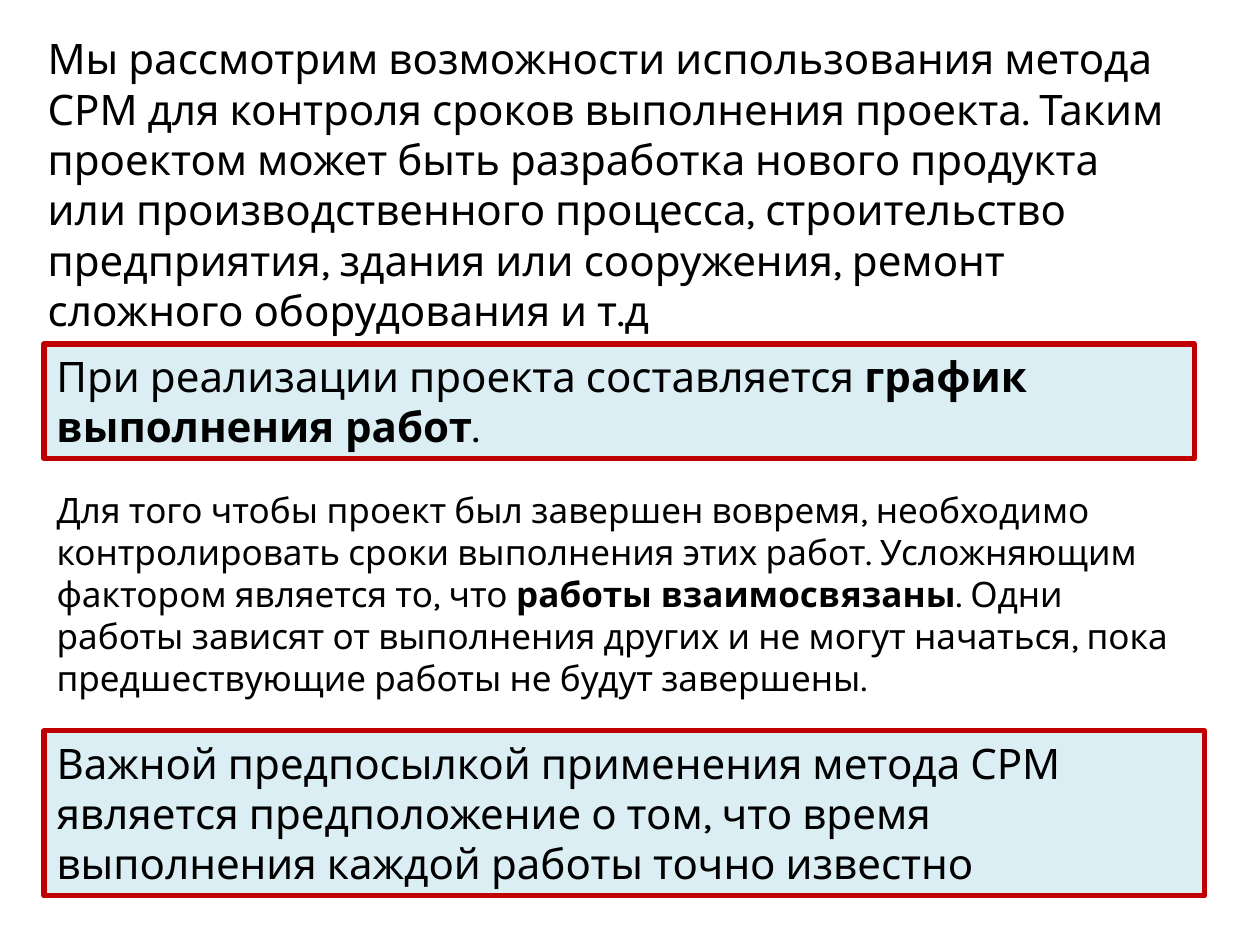
"""Builds a slide introducing the critical path method for project schedules."""
from pptx import Presentation
from pptx.dml.color import RGBColor
from pptx.enum.shapes import MSO_SHAPE
from pptx.enum.text import MSO_ANCHOR, MSO_AUTO_SIZE, PP_ALIGN
from pptx.util import Inches, Pt

THEME = {
    "font": "Karla",
    "text": RGBColor(0, 0, 0),
    "fill": RGBColor(0xDB, 0xEE, 0xF4),
    "border": RGBColor(0xC0, 0, 0),
    "border_width": Pt(3),
    "large": Pt(24),
    "body": Pt(20),
}

BLOCKS = [
    {"at": (0.28, 0.21, 9.21, 2.52), "size": "large", "framed": False, "runs": [
        ("Мы рассмотрим возможности использования метода СРМ для контроля сроков "
         "выполнения проекта. Таким проектом может быть разработка нового продукта "
         "или производственного процесса, строительство предприятия, здания или "
         "сооружения, ремонт сложного оборудования и т.д", False)]},
    {"at": (0.35, 2.73, 9.13, 0.91), "size": "large", "framed": True, "runs": [
        ("При реализации проекта составляется ", False),
        ("график выполнения работ", True),
        (".", False)]},
    {"at": (0.35, 3.83, 9.21, 1.78), "size": "body", "framed": False, "runs": [
        ("Для того чтобы проект был завершен вовремя, необходимо контролировать "
         "сроки выполнения этих работ. Усложняющим фактором является то, что ", False),
        ("работы взаимосвязаны", True),
        (". Одни работы зависят от выполнения других и не могут начаться, пока "
         "предшествующие работы не будут завершены.", False)]},
    {"at": (0.35, 5.8, 9.21, 1.31), "size": "large", "framed": True, "runs": [
        ("Важной предпосылкой применения метода СРМ является предположение о том, "
         "что время выполнения каждой работы точно известно", False)]},
]


def set_attrs(obj, values):
    for name, value in values.items():
        setattr(obj, name, value)


def add_block(slide, block):
    box = [Inches(v) for v in block["at"]]
    if block["framed"]:
        sp = slide.shapes.add_shape(MSO_SHAPE.RECTANGLE, *box)
        sp.shadow.inherit = False
        sp.fill.solid()
        sp.fill.fore_color.rgb = THEME["fill"]
        sp.line.color.rgb = THEME["border"]
        sp.line.width = THEME["border_width"]
    else:
        sp = slide.shapes.add_textbox(*box)
    tf = sp.text_frame
    set_attrs(tf, {"word_wrap": True, "vertical_anchor": MSO_ANCHOR.TOP,
                   "auto_size": MSO_AUTO_SIZE.SHAPE_TO_FIT_TEXT})
    p = tf.paragraphs[0]
    p.alignment = PP_ALIGN.LEFT
    for text, bold in block["runs"]:
        r = p.add_run()
        r.text = text
        set_attrs(r.font, {"name": THEME["font"], "size": THEME[block["size"]],
                           "bold": bold})
        r.font.color.rgb = THEME["text"]


def main():
    prs = Presentation()
    set_attrs(prs, {"slide_width": Inches(10), "slide_height": Inches(7.5)})
    slide = prs.slides.add_slide(prs.slide_layouts[6])
    for block in BLOCKS:
        add_block(slide, block)
    prs.save("out.pptx")


if __name__ == "__main__":
    main()
